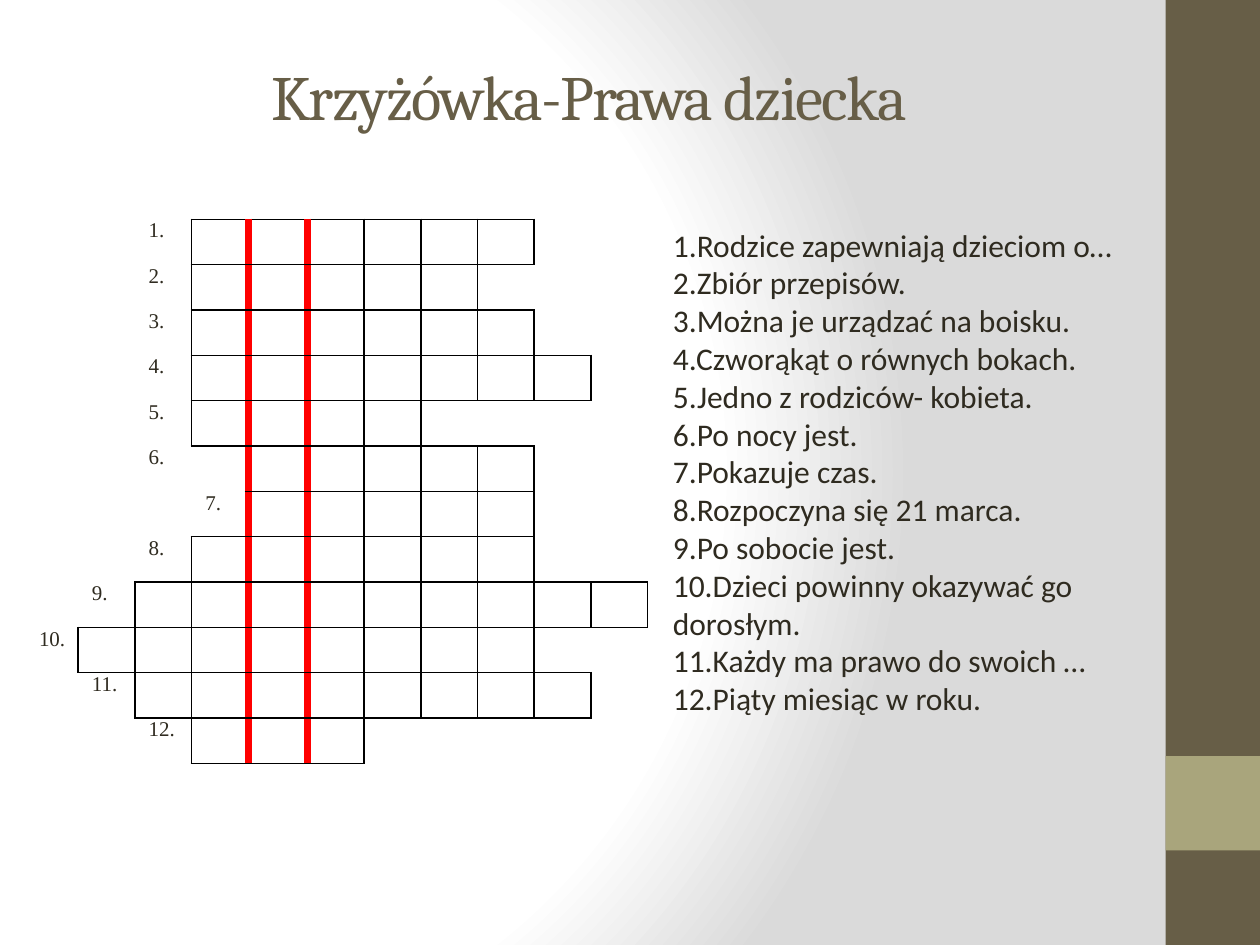
import pptx
import pptx.util
import pptx.oxml
import pptx.oxml.ns
import pptx.dml.color
import pptx.enum.shapes
import pptx.enum.text

COLORS = {"olive": "675E47", "sage": "A9A57C", "ink": "2F2B20",
          "black": "000000", "red": "FF0000", "white": "FFFFFF", "grey": "DADADA"}
COL_WIDTHS = [0.42] + [0.45] * 3 + [0.47] + [0.45] * 6
ROW_HEIGHT = 0.36
SOLUTION_COL = 4

# Column of the number, first letter column, number of letters
WORDS = [(2, 3, 6), (2, 3, 5), (2, 3, 6), (2, 3, 7), (2, 3, 4), (2, 4, 5),
         (3, 4, 5), (2, 3, 6), (1, 2, 9), (0, 1, 8), (1, 2, 8), (2, 3, 3)]
CLUES = [
    "Rodzice zapewniają dzieciom o…",
    "Zbiór przepisów.",
    "Można je urządzać na boisku.",
    "Czworąkąt o równych bokach.",
    "Jedno z rodziców- kobieta.",
    "Po nocy jest.",
    "Pokazuje czas.",
    "Rozpoczyna się 21 marca.",
    "Po sobocie jest.",
    "Dzieci powinny okazywać go dorosłym.",
    "Każdy ma prawo do swoich …",
    "Piąty miesiąc w roku.",
]


def rgb(name):
    return pptx.dml.color.RGBColor.from_string(COLORS[name])


def has_letter(row, col):
    if not 0 <= row < len(WORDS):
        return False
    _, first, count = WORDS[row]
    return first <= col < first + count


class Deck:
    """Holds the style and the current slide; boxes are in percent of its size."""

    def __init__(self, prs):
        self.prs = prs
        self.s = prs.slides.add_slide(prs.slide_layouts[1])

    def box(self, x, y, w, h):
        width, height = self.prs.slide_width, self.prs.slide_height
        return [int(v * full / 100)
                for v, full in ((x, width), (y, height), (w, width), (h, height))]

    def place(self, sp, box):
        sp.left, sp.top, sp.width, sp.height = self.box(*box)

    def font(self, p, name, size, color):
        p.font.name, p.font.size = name, pptx.util.Pt(size)
        p.font.color.rgb = rgb(color)

    def background(self):
        stops = "".join(
            f'<a:gs pos="{pos * 1000}"><a:srgbClr val="{COLORS[name]}"/></a:gs>'
            for pos, name in ((0, "white"), (75, "white"), (100, "grey")))
        self.s.element.cSld.insert(0, pptx.oxml.parse_xml(
            f'<p:bg {pptx.oxml.ns.nsdecls("p", "a")}><p:bgPr><a:gradFill rotWithShape="1">'
            f'<a:gsLst>{stops}</a:gsLst><a:path path="circle">'
            '<a:fillToRect l="20000" t="50000" r="100000" b="50000"/></a:path>'
            '</a:gradFill><a:effectLst/></p:bgPr></p:bg>'))

    def bar(self, box, color):
        sp = self.s.shapes.add_shape(
            pptx.enum.shapes.MSO_SHAPE.RECTANGLE, *self.box(*box))
        sp.shadow.inherit = False
        sp.fill.solid()
        sp.fill.fore_color.rgb = rgb(color)
        sp.line.fill.background()
        # Bars lie behind the placeholders
        self.s.shapes.element.remove(sp.element)
        first = self.s.shapes.title.element
        first.addprevious(sp.element)

    def title(self, text, box):
        sp = self.s.shapes.title
        self.place(sp, box)
        tf = sp.text_frame
        tf.text = text
        tf.vertical_anchor = pptx.enum.text.MSO_ANCHOR.MIDDLE
        p = tf.paragraphs[0]
        p.alignment = pptx.enum.text.PP_ALIGN.CENTER
        self.font(p, "Cambria", 36, "olive")
        p.runs[0].font._element.set("spc", "-100")

    def clues(self, texts, box):
        sp = self.s.placeholders[1]
        self.place(sp, box)
        tf = sp.text_frame
        tf.auto_size = pptx.enum.text.MSO_AUTO_SIZE.NONE
        tf.text = "\n".join(f"{i}.{text}" for i, text in enumerate(texts, 1))
        for p in tf.paragraphs:
            self.font(p, "Calibri", 18, "ink")
            p.space_before = pptx.util.Pt(0)
            pPr = p._p.get_or_add_pPr()
            pPr.set("marL", "0")
            pPr.set("indent", "0")
            bullet = pptx.oxml.parse_xml(f'<a:buNone {pptx.oxml.ns.nsdecls("a")}/>')
            pPr.find(pptx.oxml.ns.qn("a:defRPr")).addprevious(bullet)

    def borders(self, cell, row, col):
        """Rule every edge that touches a letter; the solution column is red."""
        edges = (("L", 0, -1), ("R", 0, 1), ("T", -1, 0), ("B", 1, 0))
        for side, dr, dc in edges:
            red = dc and SOLUTION_COL in (col, col + dc)
            color, width = ("red", 4.5) if red else ("black", 1)
            drawn = has_letter(row, col) or has_letter(row + dr, col + dc)
            fill = (f'<a:solidFill><a:srgbClr val="{COLORS[color]}"/></a:solidFill>'
                    if drawn else "<a:noFill/>")
            cell._tc.get_or_add_tcPr().append(pptx.oxml.parse_xml(
                f'<a:ln{side} {pptx.oxml.ns.nsdecls("a")} '
                f'w="{pptx.util.Pt(width)}">{fill}</a:ln{side}>'))

    def crossword(self, box):
        table = self.s.shapes.add_table(
            len(WORDS), len(COL_WIDTHS), *self.box(*box)).table
        table.first_row = table.horz_banding = False
        for column, width in zip(table.columns, COL_WIDTHS):
            column.width = pptx.util.Inches(width)
        for r, (label_col, _, _) in enumerate(WORDS):
            table.rows[r].height = pptx.util.Inches(ROW_HEIGHT)
            for c in range(len(COL_WIDTHS)):
                cell = table.cell(r, c)
                cell.margin_left = pptx.util.Inches(0.11)
                cell.margin_right = cell.margin_top = cell.margin_bottom = 0
                if c == label_col:
                    cell.text = f"{r + 1}."
                self.font(cell.text_frame.paragraphs[0], "Times New Roman", 12, "ink")
                self.borders(cell, r, c)
                cell.fill.background()


def main():
    prs = pptx.Presentation()
    prs.slide_width, prs.slide_height = pptx.util.Inches(10), pptx.util.Inches(7.5)
    deck = Deck(prs)
    deck.background()
    deck.bar((92.5, 0, 7.5, 100), "olive")
    deck.bar((92.5, 80, 7.5, 10), "sage")
    deck.title("Krzyżówka-Prawa dziecka", (5.1, 3.87, 83.3, 12.53))
    deck.crossword((2, 23.2, 49.6, 58.27))
    deck.clues(CLUES, (52.4, 23.2, 43.7, 57.87))
    prs.save("out.pptx")


if __name__ == "__main__":
    main()
